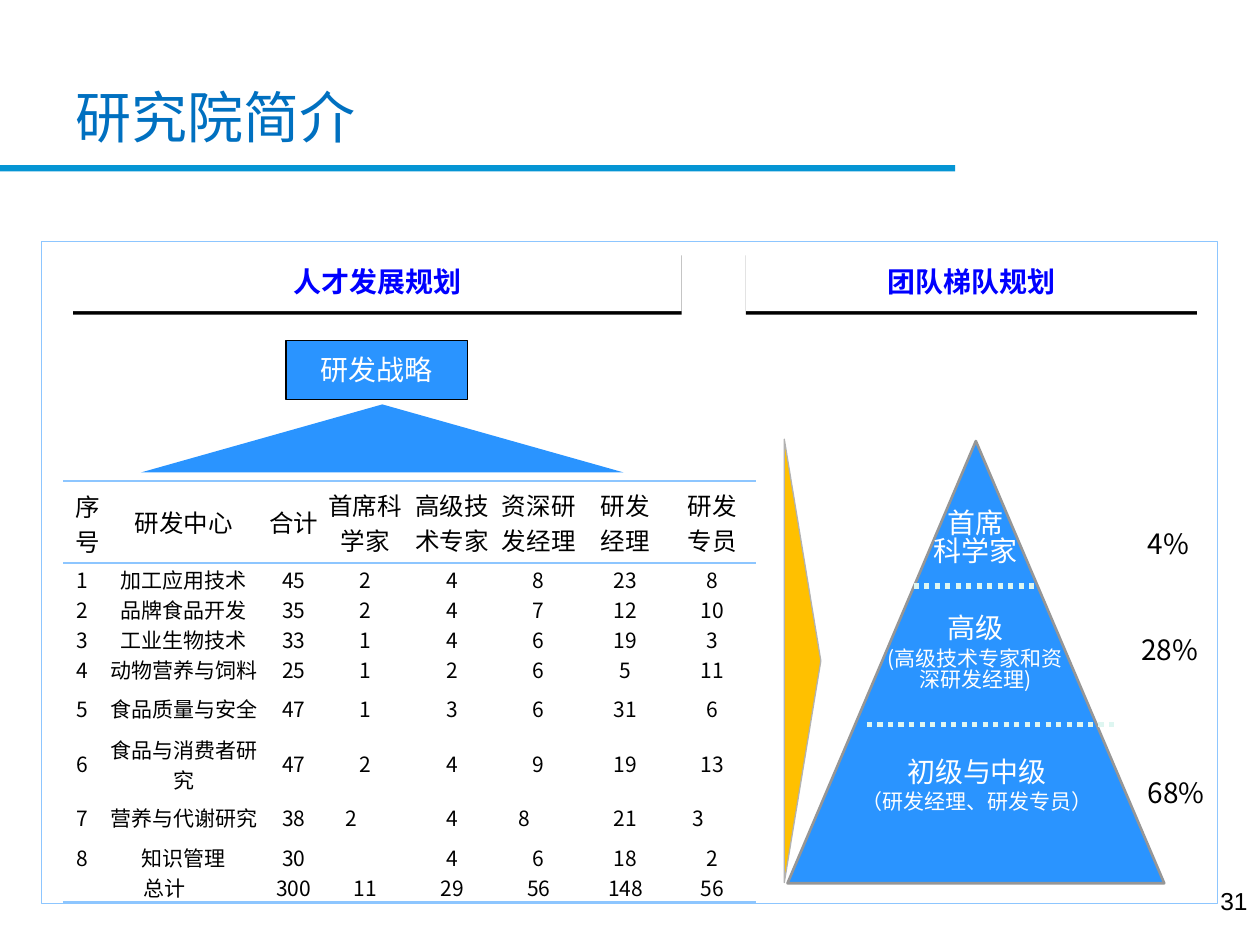
from dataclasses import dataclass
from typing import Optional

from lxml.etree import SubElement
from pptx import Presentation
from pptx.dml.color import RGBColor
from pptx.enum.dml import MSO_LINE
from pptx.enum.shapes import MSO_CONNECTOR, MSO_SHAPE
from pptx.enum.text import MSO_ANCHOR, PP_ALIGN
from pptx.oxml.ns import qn
from pptx.util import Pt

BLACK = RGBColor(0x00, 0x00, 0x00)
WHITE = RGBColor(0xFF, 0xFF, 0xFF)
BLUE = RGBColor(0x2A, 0x94, 0xFF)
PALE_BLUE = RGBColor(0x8D, 0xC6, 0xFF)
RULE_BLUE = RGBColor(0x05, 0x95, 0xD4)
TITLE_BLUE = RGBColor(0x00, 0x70, 0xC0)
HEADING_BLUE = RGBColor(0x00, 0x00, 0xFF)
AMBER = RGBColor(0xFF, 0xC0, 0x00)
LIGHT_GREY = RGBColor(0xB2, 0xB2, 0xB2)
GREY = RGBColor(0x96, 0x96, 0x96)
MINT = RGBColor(0xDE, 0xF6, 0xF1)
CJK_FONT = "Noto Sans CJK SC"
NO_STYLE_NO_GRID = "{2D5ABB26-0587-4C30-8999-92F81FD0307C}"

COLUMN_WIDTHS = [22.3, 93.5, 32.2, 49.6, 49.6, 49.6, 49.6, 49.6]
ROW_HEIGHTS = [46.8, 17.3, 17.3, 17.3, 17.3, 28.1, 33.8, 28.1, 17.3, 17.3]
STAFF_ROWS = [
    ["序号", "研发中心", "合计", "首席科学家", "高级技术专家", "资深研发经理", "研发\n经理", "研发\n专员"],
    ["1", "加工应用技术", "45", "2", "4", "8", "23", "8"],
    ["2", "品牌食品开发", "35", "2", "4", "7", "12", "10"],
    ["3", "工业生物技术", "33", "1", "4", "6", "19", "3"],
    ["4", "动物营养与饲料", "25", "1", "2", "6", "5", "11"],
    ["5", "食品质量与安全", "47", "1", "3", "6", "31", "6"],
    ["6", "食品与消费者研究", "47", "2", "4", "9", "19", "13"],
    ["7", "营养与代谢研究", "38", "2", "4", "8", "21", "3"],
    ["8", "知识管理", "30", "", "4", "6", "18", "2"],
    ["总计", "", "300", "11", "29", "56", "148", "56"],
]
LEFT_SHIFTED_CELLS = {(7, 3), (7, 5), (7, 7)}


@dataclass
class Box:
    left: float
    top: float
    width: float
    height: float

    def lengths(self) -> tuple:
        return Pt(self.left), Pt(self.top), Pt(self.width), Pt(self.height)


@dataclass
class Line:
    text: str
    size: float = 16
    color: RGBColor = BLACK
    font: str = CJK_FONT
    bold: bool = False
    align: PP_ALIGN = PP_ALIGN.CENTER
    space_before: float = 0
    spacing: Optional[float] = None


@dataclass
class Level:
    """One level of the team pyramid, with its share of staff."""
    box: Box
    lines: list
    share: str
    share_left: float
    share_top: float


def write_lines(frame, lines: list) -> None:
    for index, line in enumerate(lines):
        paragraph = frame.paragraphs[0] if index == 0 else frame.add_paragraph()
        paragraph.text = line.text
        paragraph.alignment = line.align
        if line.space_before:
            paragraph.space_before = Pt(line.space_before)
        if line.spacing:
            paragraph.line_spacing = line.spacing
        font = paragraph.font
        font.size, font.bold, font.name = Pt(line.size), line.bold, line.font
        font.color.rgb = line.color
        properties = paragraph._p.pPr.find(qn("a:defRPr"))
        SubElement(properties, qn("a:ea"), typeface=line.font)
        if not line.text:
            SubElement(paragraph._p, qn("a:endParaRPr"), sz=str(int(line.size * 100)))


def set_margins(target, horizontal: float, vertical: float) -> None:
    target.margin_left = target.margin_right = Pt(horizontal)
    target.margin_top = target.margin_bottom = Pt(vertical)


def add_text(slide, box: Box, lines: list, anchor=MSO_ANCHOR.TOP, margins=(7.2, 3.6)) -> None:
    frame = slide.shapes.add_textbox(*box.lengths()).text_frame
    frame.word_wrap = True
    frame.vertical_anchor = anchor
    set_margins(frame, *margins)
    write_lines(frame, lines)


def add_figure(slide, box: Box, fill=None, line=None, line_width=0.75, kind=MSO_SHAPE.RECTANGLE):
    shape = slide.shapes.add_shape(kind, *box.lengths())
    shape.shadow.inherit = False
    if fill is None:
        shape.fill.background()
    else:
        shape.fill.solid()
        shape.fill.fore_color.rgb = fill
    if line is None:
        shape.line.fill.background()
    else:
        shape.line.color.rgb = line
        shape.line.width = Pt(line_width)
    return shape


def label_figure(shape, line: Line, anchor) -> None:
    frame = shape.text_frame
    frame.word_wrap = True
    frame.vertical_anchor = anchor
    set_margins(frame, 7.2, 7.2)
    write_lines(frame, [line])


def add_heading(slide, box: Box, text: str) -> None:
    """White panel whose hard shadow forms a black underline."""
    shape = add_figure(slide, box, WHITE)
    effects = shape._element.spPr.find(qn("a:effectLst"))
    shadow = SubElement(effects, qn("a:outerShdw"), dist=str(Pt(2)), dir="5400000", rotWithShape="0")
    SubElement(shadow, qn("a:srgbClr"), val=str(BLACK))
    label_figure(shape, Line(text, color=HEADING_BLUE, bold=True), MSO_ANCHOR.BOTTOM)


def add_divider(slide, left: float, right: float, top: float) -> None:
    connector = slide.shapes.add_connector(MSO_CONNECTOR.STRAIGHT, Pt(left), Pt(top), Pt(right), Pt(top))
    connector.line.color.rgb = MINT
    connector.line.width = Pt(3)
    connector.line.dash_style = MSO_LINE.ROUND_DOT
    SubElement(connector._element.spPr, qn("a:effectLst"))


def add_border(cell, side: str, position: int) -> None:
    border = cell._tc.get_or_add_tcPr()
    line = border.makeelement(qn(f"a:{side}"), {"w": str(Pt(1))})
    border.insert(position, line)
    SubElement(SubElement(line, qn("a:solidFill")), qn("a:srgbClr"), val=str(PALE_BLUE))


def add_staff_table(slide) -> None:
    box = Box(36, 275, sum(COLUMN_WIDTHS), sum(ROW_HEIGHTS))
    table = slide.shapes.add_table(len(ROW_HEIGHTS), len(COLUMN_WIDTHS), *box.lengths()).table
    table.first_row = table.horz_banding = False
    table._tbl.tblPr.find(qn("a:tableStyleId")).text = NO_STYLE_NO_GRID
    for column, width in zip(table.columns, COLUMN_WIDTHS):
        column.width = Pt(width)
    last_row = len(STAFF_ROWS) - 1
    for row_index, (row, values) in enumerate(zip(table.rows, STAFF_ROWS)):
        row.height = Pt(ROW_HEIGHTS[row_index])
        for column_index, value in enumerate(values):
            cell = table.cell(row_index, column_index)
            cell.fill.background()
            cell.vertical_anchor = MSO_ANCHOR.MIDDLE
            if row_index > 0 or column_index > 1:
                set_margins(cell, 0.7, 0.4)
            if (row_index, column_index) in LEFT_SHIFTED_CELLS:
                cell.margin_right = Pt(17)
            size = 14 if row_index == 0 else 12
            write_lines(cell.text_frame, [Line(text, size) for text in value.split("\n")])
            if row_index in (0, last_row):
                add_border(cell, "lnB", 0)
            if row_index == 0:
                add_border(cell, "lnT", 0)
    table.cell(last_row, 0).merge(table.cell(last_row, 1))


def pyramid_line(text: str, size: float = 16, space_before: float = 0) -> Line:
    return Line(text, size, WHITE, space_before=space_before, spacing=0.85)


LEVELS = [
    Level(Box(529.9, 291.6, 54.7, 38.9), [pyramid_line("首席"), pyramid_line("科学家")], "4%", 648.7, 297.4),
    Level(Box(503.3, 352.1, 108, 51.1),
          [pyramid_line("高级"), pyramid_line("(高级技术专家和资深研发经理)", 12, 2.4)], "28%", 645.1, 357.8),
    Level(Box(489.6, 434.2, 137.5, 36.7),
          [pyramid_line("初级与中级"), pyramid_line("（研发经理、研发专员）", 12, 2.4)], "68%", 648.7, 439.9),
]


def main() -> None:
    presentation = Presentation()
    presentation.slide_width, presentation.slide_height = Pt(720), Pt(540)
    slide = presentation.slides.add_slide(presentation.slide_layouts[6])

    add_figure(slide, Box(0, 94.3, 545.8, 3.6), RULE_BLUE)
    title = Line("研究院简介", 32, TITLE_BLUE, "Arial", align=PP_ALIGN.LEFT)
    add_text(slide, Box(36, 21.6, 648, 90), [title], MSO_ANCHOR.MIDDLE)

    add_heading(slide, Box(41.8, 144, 347.8, 33.8), "人才发展规划")
    add_figure(slide, Box(80.6, 231.1, 275.8, 38.9), BLUE, kind=MSO_SHAPE.ISOSCELES_TRIANGLE)
    strategy = add_figure(slide, Box(163.4, 194.4, 103.7, 33.8), BLUE, BLACK)
    label_figure(strategy, Line("研发战略", color=WHITE), MSO_ANCHOR.MIDDLE)

    add_heading(slide, Box(426.2, 144, 257.8, 33.8), "团队梯队规划")
    pointer = add_figure(slide, Box(331.9, 367.2, 253.4, 20.9), AMBER, LIGHT_GREY,
                         kind=MSO_SHAPE.ISOSCELES_TRIANGLE)
    pointer.rotation = 90
    add_figure(slide, Box(450, 252, 215.3, 252.7), BLUE, GREY, 1.5, MSO_SHAPE.FLOWCHART_EXTRACT)
    add_divider(slide, 522, 591.8, 334.8)
    add_divider(slide, 495.4, 638.6, 414)
    for level in LEVELS:
        add_text(slide, level.box, level.lines, margins=(0, 0))

    add_staff_table(slide)
    for level in LEVELS:
        add_text(slide, Box(level.share_left, level.share_top, 54, 26.6), [Line(level.share, align=PP_ALIGN.LEFT)])
    add_text(slide, Box(552.2, 502.6, 167.8, 37.4), [Line("31", 14, font="Arial", align=PP_ALIGN.RIGHT)])
    add_figure(slide, Box(23.8, 138.2, 671.8, 378), line=PALE_BLUE)
    presentation.save("out.pptx")


if __name__ == "__main__":
    main()
